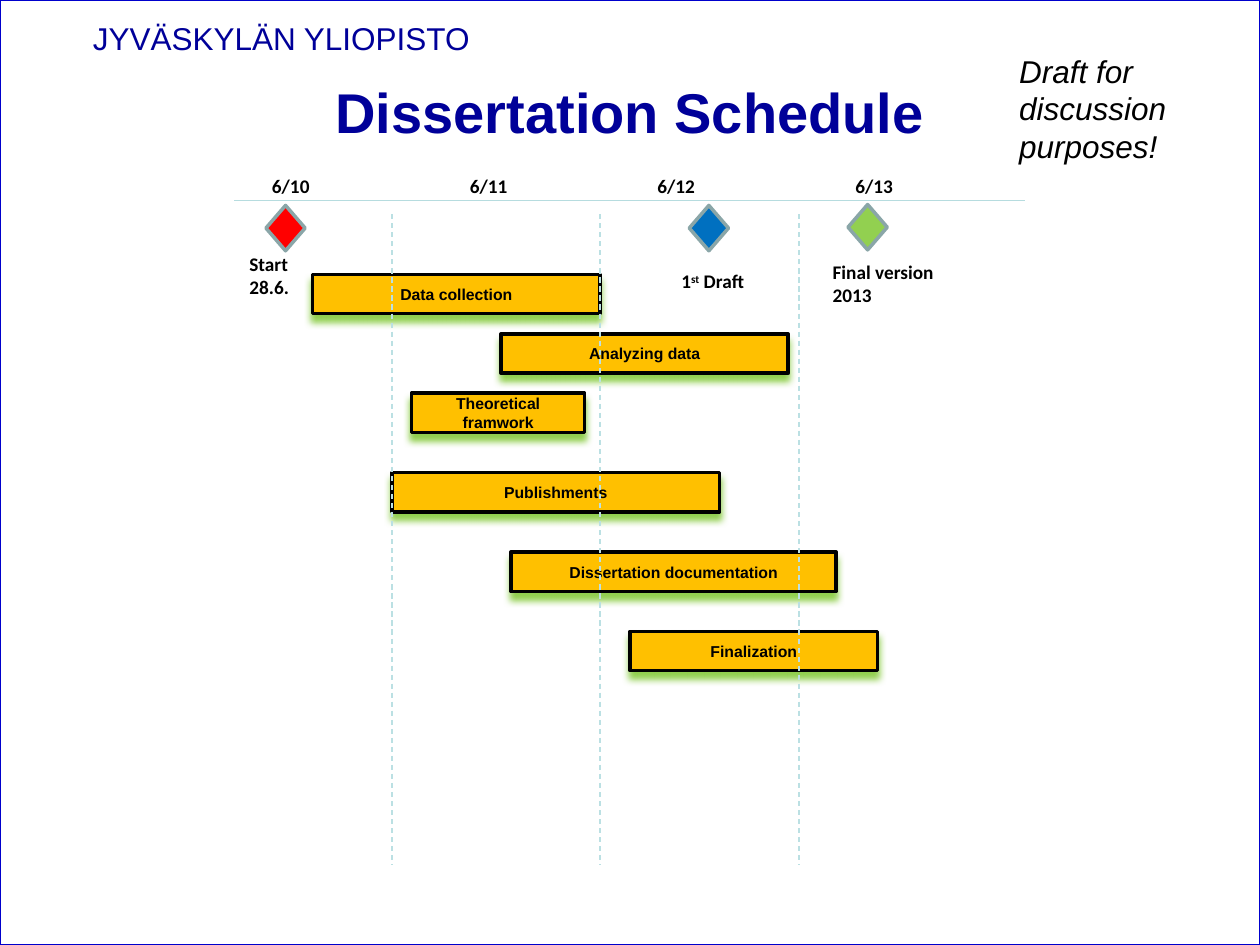
from lxml import etree
from pptx import Presentation
from pptx.dml.color import RGBColor
from pptx.enum.dml import MSO_LINE
from pptx.enum.shapes import MSO_CONNECTOR, MSO_SHAPE
from pptx.enum.text import MSO_ANCHOR, MSO_AUTO_SIZE, PP_ALIGN
from pptx.oxml.ns import qn
from pptx.util import Pt

RECTANGLE = MSO_SHAPE.RECTANGLE
DIAMOND = MSO_SHAPE.FLOWCHART_DECISION
STRAIGHT = MSO_CONNECTOR.STRAIGHT
DASH = MSO_LINE.DASH
MIDDLE = MSO_ANCHOR.MIDDLE
CENTER = PP_ALIGN.CENTER
NO_FIT = MSO_AUTO_SIZE.NONE
GROW = MSO_AUTO_SIZE.SHAPE_TO_FIT_TEXT

NAVY = RGBColor(0x00, 0x00, 0x99)
BLUE = RGBColor(0x00, 0x00, 0xCC)
BLACK = RGBColor(0x00, 0x00, 0x00)
WHITE = RGBColor(0xFF, 0xFF, 0xFF)
RED = RGBColor(0xFF, 0x00, 0x00)
SKY = RGBColor(0x00, 0x70, 0xC0)
GREEN = RGBColor(0x92, 0xD0, 0x50)
AMBER = RGBColor(0xFF, 0xC0, 0x00)
SLATE = RGBColor(0x8A, 0xA6, 0xA8)
GRID = RGBColor(0xBB, 0xE0, 0xE3)
AXIS = RGBColor(0xB6, 0xDC, 0xDF)


def write(box, lines, size, name, color=BLACK, bold=False, italic=False, align=None):
    frame = box.text_frame
    for index, line in enumerate(lines):
        para = frame.paragraphs[0] if index == 0 else frame.add_paragraph()
        para.alignment = align
        for text in line:
            if text == "\n":
                para.add_line_break()
                continue
            span = para.add_run()
            span.text = text
            span.font.size = Pt(size)
            span.font.name = name
            span.font.bold = bold
            span.font.italic = italic
            span.font.color.rgb = color
            if text == "st":
                span._r.get_or_add_rPr().set("baseline", "30000")


def add_rule(start_x, start_y, end_x, end_y, color):
    rule = page.shapes.add_connector(STRAIGHT, Pt(start_x), Pt(start_y), Pt(end_x), Pt(end_y))
    rule.line.color.rgb = color
    rule.line.width = Pt(0.75)
    etree.SubElement(rule._element.spPr, qn("a:effectLst"))
    return rule


deck = Presentation()
deck.slide_width = Pt(720)
deck.slide_height = Pt(540)
page = deck.slides.add_slide(deck.slide_layouts[5])

title = page.shapes.title
title.left, title.top, title.width, title.height = Pt(36), Pt(38.2), Pt(648), Pt(50.4)
title.text_frame.auto_size = NO_FIT
title.text_frame.vertical_anchor = MIDDLE
write(title, [["Dissertation Schedule"]], 32, "Arial", NAVY, bold=True, align=CENTER)

border = page.shapes.add_shape(RECTANGLE, Pt(0), Pt(0), Pt(720), Pt(540))
border.shadow.inherit = False
border.fill.background()
border.line.color.rgb = BLUE
border.line.width = Pt(1)

university = page.shapes.add_textbox(Pt(46), Pt(7.2), Pt(240.5), Pt(28.8))
university.text_frame.word_wrap = True
write(university, [["JYVÄSKYLÄN YLIOPISTO"]], 18, "Arial", NAVY)

for left, top, color in [(152, 117.4, RED), (393.9, 117.4, SKY), (484.6, 116.9, GREEN)]:
    milestone = page.shapes.add_shape(DIAMOND, Pt(left), Pt(top), Pt(22.4), Pt(25.9))
    milestone.shadow.inherit = False
    milestone.fill.solid()
    milestone.fill.fore_color.rgb = color
    milestone.line.color.rgb = SLATE
    milestone.line.width = Pt(2)

tasks = [
    ("Data collection", 178.6, 156.8, 164.2),
    ("Analyzing data", 286.2, 190.8, 164.2),
    ("Theoretical framwork", 235.2, 224.7, 98.9),
    ("Publishments", 224, 270.1, 187.2),
    ("Dissertation documentation", 292, 315.5, 185.8),
    ("Finalization", 360, 360.8, 141.5),
]
for name, left, top, width in tasks:
    bar = page.shapes.add_shape(RECTANGLE, Pt(left), Pt(top), Pt(width), Pt(22.5))
    bar.fill.solid()
    bar.fill.fore_color.rgb = AMBER
    bar.line.color.rgb = BLACK
    bar.line.width = Pt(2)
    bar.shadow.inherit = False
    effects = bar._element.spPr.find(qn("a:effectLst"))
    glow = etree.SubElement(effects, qn("a:outerShdw"), blurRad=str(Pt(4)),
                            dist=str(Pt(4)), dir="5400000", rotWithShape="0")
    etree.SubElement(glow, qn("a:srgbClr"), val=str(GREEN))
    bar.text_frame.word_wrap = True
    bar.text_frame.vertical_anchor = MIDDLE
    write(bar, [[name]], 9, "Arial", bold=True, align=CENTER)

for x in (224, 342.8, 456.5):
    add_rule(x, 122.4, x, 494, GRID).line.dash_style = DASH
add_rule(134, 114.5, 586, 114.5, AXIS)

labels = [
    ([["6/10"]], 148.3, 95.8, 36.7, 20.6),
    ([["6/11"]], 261.4, 95.8, 36.7, 20.6),
    ([["6/12"]], 368.6, 95.8, 36.7, 20.6),
    ([["6/13"]], 481.7, 95.8, 36.7, 20.6),
    ([["Start"], ["28.6."]], 135.4, 140.4, 37.4, 33.8),
    ([["1", "st", " Draft"]], 382.3, 150.5, 51.8, 20.6),
    ([["Final version", "\n", "2013"]], 468.7, 145.4, 72.7, 33.8),
]
for lines, left, top, width, height in labels:
    label = page.shapes.add_textbox(Pt(left), Pt(top), Pt(width), Pt(height))
    label.text_frame.word_wrap = False
    label.text_frame.auto_size = GROW
    write(label, lines, 11, "Calibri", bold=True)
label.fill.solid()
label.fill.fore_color.rgb = WHITE

note = page.shapes.add_textbox(Pt(575.3), Pt(25.9), Pt(104.4), Pt(72.7))
note.text_frame.word_wrap = False
note.text_frame.auto_size = GROW
write(note, [["Draft for"], ["discussion"], ["purposes!"]], 18, "Arial", italic=True)

deck.save("out.pptx")
